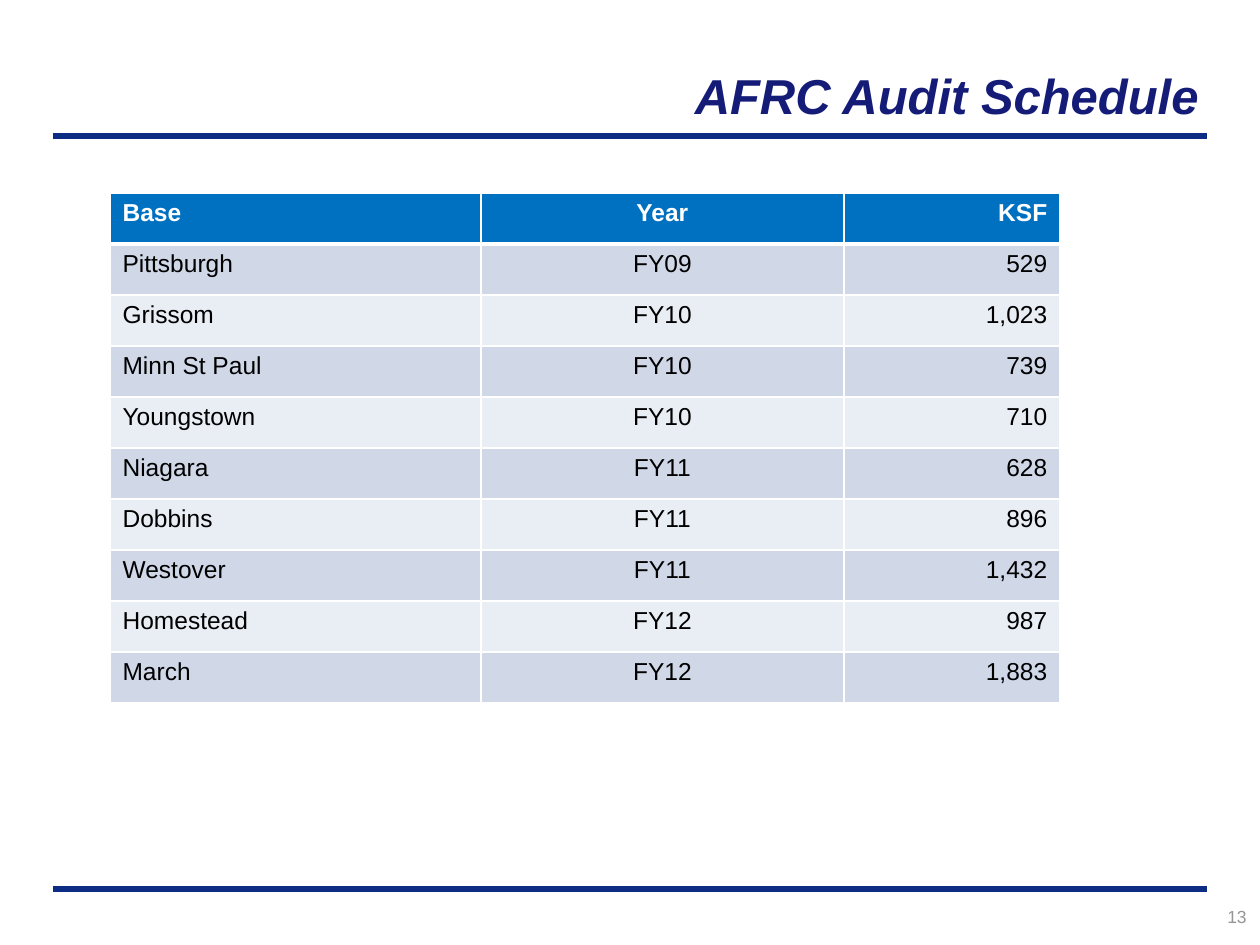
"""Build the AFRC audit schedule slide."""
from lxml.etree import SubElement
from pptx import Presentation
from pptx.dml.color import RGBColor
from pptx.enum.shapes import MSO_CONNECTOR
from pptx.enum.text import MSO_ANCHOR, PP_ALIGN
from pptx.oxml.ns import qn
from pptx.util import Pt

TITLE = "AFRC Audit Schedule"
PAGE_NUMBER = "13"
HEADER = ("Base", "Year", "KSF")
AUDITS = [
    ("Pittsburgh", "FY09", "529"),
    ("Grissom", "FY10", "1,023"),
    ("Minn St Paul", "FY10", "739"),
    ("Youngstown", "FY10", "710"),
    ("Niagara", "FY11", "628"),
    ("Dobbins", "FY11", "896"),
    ("Westover", "FY11", "1,432"),
    ("Homestead", "FY12", "987"),
    ("March", "FY12", "1,883"),
]
COLUMN_WIDTHS = (371, 363, 216)
COLUMN_ALIGNMENTS = (PP_ALIGN.LEFT, PP_ALIGN.CENTER, PP_ALIGN.RIGHT)
ROW_HEIGHT = 51
TABLE_LEFT, TABLE_TOP = 110, 193
RULE_LEFT, RULE_RIGHT = 53, 1207
RULE_TOPS = (136, 889)

FONT = "Arial"
NAVY = RGBColor(0x0C, 0x2D, 0x83)
INDIGO = RGBColor(0x15, 0x1C, 0x77)
GRAY = RGBColor(0x96, 0x96, 0x96)
BLUE = RGBColor(0x00, 0x70, 0xC0)
WHITE = RGBColor(0xFF, 0xFF, 0xFF)
BLACK = RGBColor(0x00, 0x00, 0x00)
BANDS = (RGBColor(0xD0, 0xD8, 0xE8), RGBColor(0xE9, 0xED, 0xF4))


def px(length):
    return round(length * 914400 / 126)


def write_text(frame, text, *, size, color, align, bold=False, italic=False):
    paragraph = frame.paragraphs[0]
    paragraph.alignment = align
    run = paragraph.add_run()
    run.text = text
    font = run.font
    font.name, font.size = FONT, Pt(size)
    font.bold, font.italic = bold, italic
    font.color.rgb = color


def add_text_box(slide, text, box, *, anchor=MSO_ANCHOR.TOP, **text_format):
    frame = slide.shapes.add_textbox(*map(px, box)).text_frame
    frame.word_wrap = True
    frame.vertical_anchor = anchor
    write_text(frame, text, align=PP_ALIGN.RIGHT, **text_format)


def add_rule(slide, top):
    rule = slide.shapes.add_connector(
        MSO_CONNECTOR.STRAIGHT, px(RULE_LEFT), px(top), px(RULE_RIGHT), px(top))
    rule.line.color.rgb = NAVY
    rule.line.width = Pt(3)
    SubElement(rule._element.spPr, qn("a:effectLst"))


def set_borders(cell, **widths):
    properties = cell._tc.get_or_add_tcPr()
    for side in ("L", "R", "T", "B"):
        line = SubElement(properties, qn(f"a:ln{side}"), w=str(Pt(widths.get(side, 1))))
        fill = SubElement(line, qn("a:solidFill"))
        SubElement(fill, qn("a:srgbClr"), val=str(WHITE))


def add_schedule(slide):
    rows = [HEADER, *AUDITS]
    table = slide.shapes.add_table(
        len(rows), len(HEADER), px(TABLE_LEFT), px(TABLE_TOP),
        px(sum(COLUMN_WIDTHS)), px(ROW_HEIGHT * len(rows))).table
    for column, width in zip(table.columns, COLUMN_WIDTHS):
        column.width = px(width)
    for row_index, values in enumerate(rows):
        table.rows[row_index].height = px(ROW_HEIGHT)
        is_header = row_index == 0
        borders = {0: {"B": 3}, 1: {"T": 3}}.get(row_index, {})
        for column_index, value in enumerate(values):
            cell = table.cell(row_index, column_index)
            set_borders(cell, **borders)
            cell.fill.solid()
            cell.fill.fore_color.rgb = BLUE if is_header else BANDS[(row_index - 1) % 2]
            write_text(cell.text_frame, value, size=14, bold=is_header,
                       color=WHITE if is_header else BLACK,
                       align=COLUMN_ALIGNMENTS[column_index])


def main():
    presentation = Presentation()
    presentation.slide_width, presentation.slide_height = px(1260), px(945)
    slide = presentation.slides.add_slide(presentation.slide_layouts[6])
    for top in RULE_TOPS:
        add_rule(slide, top)
    add_text_box(slide, TITLE, (227, 33, 984, 98), anchor=MSO_ANCHOR.BOTTOM,
                 size=28, color=INDIGO, bold=True, italic=True)
    add_text_box(slide, PAGE_NUMBER, (1101, 900, 158, 42), size=10, color=GRAY)
    add_schedule(slide)
    presentation.save("out.pptx")


if __name__ == "__main__":
    main()
